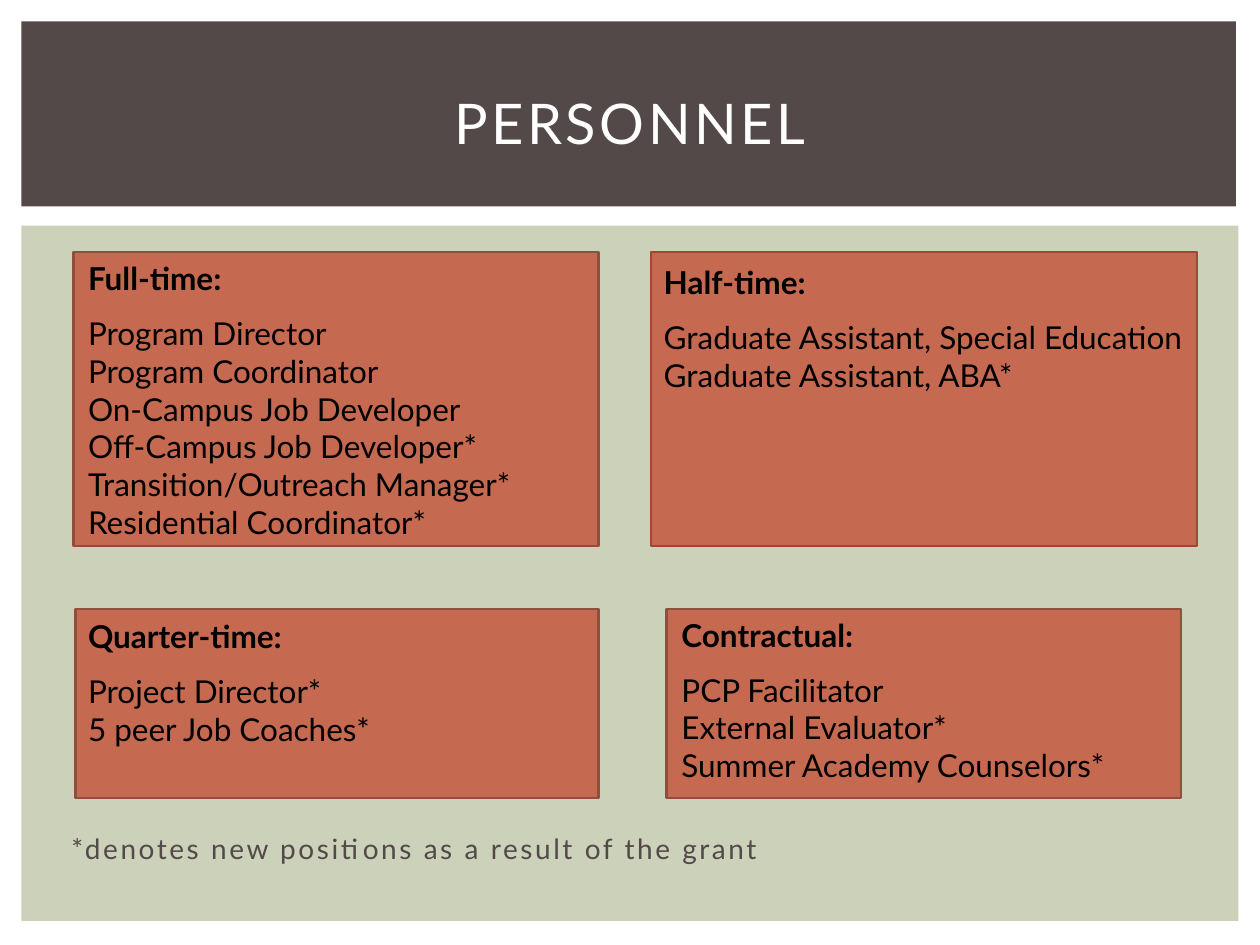
from lxml import etree
from pptx import Presentation
from pptx.dml.color import RGBColor
from pptx.enum.shapes import MSO_SHAPE
from pptx.enum.text import MSO_ANCHOR, MSO_AUTO_SIZE, PP_ALIGN
from pptx.oxml.ns import qn
from pptx.util import Pt

RECT = MSO_SHAPE.RECTANGLE
TOP, MIDDLE, BOTTOM = MSO_ANCHOR.TOP, MSO_ANCHOR.MIDDLE, MSO_ANCHOR.BOTTOM
LEFT, CENTER = PP_ALIGN.LEFT, PP_ALIGN.CENTER
NO_FIT = MSO_AUTO_SIZE.NONE

BLACK = RGBColor(0x00, 0x00, 0x00)
WHITE = RGBColor(0xFF, 0xFF, 0xFF)
BROWN = RGBColor(0x53, 0x49, 0x49)
SAGE = RGBColor(0xCC, 0xD1, 0xB9)
RUST = RGBColor(0xC6, 0x69, 0x51)
RUST_EDGE = RGBColor(0x92, 0x4E, 0x3C)
RED_EDGE = RGBColor(0x9E, 0x49, 0x34)
FONT = "Lato"

# Content: boxes are (left, top, width, height) in points
TITLE = "PERSONNEL"
FOOTNOTE = "*denotes new positions as a result of the grant"
BANDS = [((12.2, 128.9, 695.5, 397.4), SAGE), ((12.2, 12.2, 694, 105.8), BROWN)]
CARDS = [
    ("Full-time:",
     ["Program Director", "Program Coordinator", "On-Campus Job Developer",
      "Off-Campus Job Developer*", "Transition/Outreach Manager*",
      "Residential Coordinator*"],
     (42, 144, 300, 168), (43.2, 144.7, 306, 191.5), RUST_EDGE),
    ("Half-time:",
     ["Graduate Assistant, Special Education", "Graduate Assistant, ABA*"],
     (372, 144, 312, 168), (372.2, 146.9, 311, 82), RED_EDGE),
    ("Contractual:",
     ["PCP Facilitator", "External Evaluator*", "Summer Academy Counselors*"],
     (381, 348, 294, 108), (382.3, 348.5, 311, 126), RUST_EDGE),
    ("Quarter-time:",
     ["Project Director*", "5 peer Job Coaches*"],
     (43, 348, 299, 108), (43.2, 349.2, 311, 82), RUST_EDGE),
]


def points(box):
    return [Pt(v) for v in box]


def place(sp, box):
    sp.left, sp.top, sp.width, sp.height = points(box)


def add_rect(s, box, fill, line=None):
    sp = s.shapes.add_shape(RECT, *points(box))
    sp.shadow.inherit = False
    sp.fill.solid()
    sp.fill.fore_color.rgb = fill
    if line is None:
        sp.line.fill.background()
    else:
        sp.line.color.rgb = line
        sp.line.width = Pt(1.5)
    return sp


def write(sp, lines, size=18, color=BLACK, align=LEFT, anchor=TOP,
          spacing=0, bold_first=False, first_gap=0):
    tf = sp.text_frame
    tf.word_wrap = True
    tf.auto_size = NO_FIT
    tf.vertical_anchor = anchor
    for i, text in enumerate(lines):
        p = tf.add_paragraph() if i else tf.paragraphs[0]
        p.alignment = align
        p.space_before = Pt(0)
        p.space_after = Pt(0 if i else first_gap)
        r = p.add_run()
        r.text = text
        r.font.name = FONT
        r.font.size = Pt(size)
        r.font.bold = bold_first and i == 0
        r.font.color.rgb = color
        if spacing:
            r.font._element.set("spc", str(int(spacing * 100)))
    return tf


prs = Presentation()
prs.slide_width, prs.slide_height = Pt(720), Pt(540)
s = prs.slides.add_slide(prs.slide_layouts[1])
title, body = s.placeholders

# Background bands, behind the placeholders
for i, (box, fill) in enumerate(BANDS):
    band = add_rect(s, box, fill)
    s.shapes._spTree.insert(2 + i, band._element)

# Title
place(title, (30, 28, 660, 83))
write(title, [TITLE], size=32, color=WHITE, align=CENTER, anchor=MIDDLE, spacing=2)

# Footnote, at the foot of the body
place(body, (30, 135.4, 662, 362.6))
tf = write(body, [FOOTNOTE], size=16, color=BROWN, anchor=BOTTOM, spacing=1.5)
pPr = tf.paragraphs[0]._p.get_or_add_pPr()
pPr.set("marL", str(Pt(3.6)))
pPr.set("indent", "0")
etree.SubElement(pPr, qn("a:buNone"))

# Staff cards
for heading, roles, card_box, text_box, edge in CARDS:
    add_rect(s, card_box, RUST, edge)
    label = s.shapes.add_textbox(*points(text_box))
    write(label, [heading, *roles], bold_first=True, first_gap=9.6)

prs.save("out.pptx")
